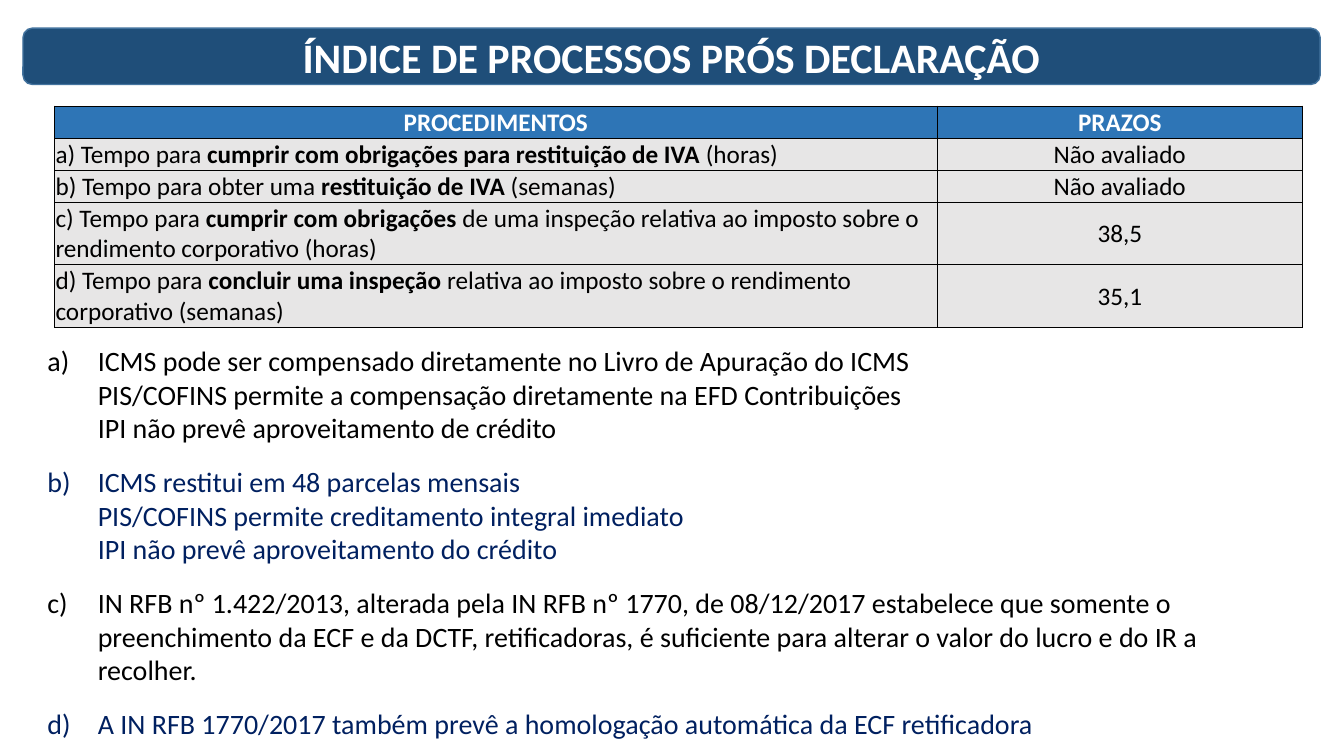
"""Build the slide on post-filing process indicators."""
from lxml.etree import SubElement
from pptx import Presentation
from pptx.dml.color import RGBColor
from pptx.enum.shapes import MSO_SHAPE
from pptx.enum.text import MSO_ANCHOR, MSO_AUTO_SIZE, PP_ALIGN
from pptx.oxml.ns import qn
from pptx.util import Cm, Pt

FONT = "Calibri"
BLACK, WHITE, NAVY = "000000", "FFFFFF", "002060"
BANNER, BANNER_EDGE, HEADER, ROW = "1F4E79", "43739E", "2E75B6", "E7E6E6"

TITLE = "ÍNDICE DE PROCESSOS PRÓS DECLARAÇÃO"
HEADINGS = ("PROCEDIMENTOS", "PRAZOS")
PROCEDURES = [
    (("a) Tempo para ", "cumprir com obrigações para restituição de IVA ", "(horas)"),
     "Não avaliado"),
    (("b) Tempo para obter uma ", "restituição de IVA ", "(semanas)"),
     "Não avaliado"),
    (("c) Tempo para ", "cumprir com obrigações",
      " de uma inspeção relativa ao imposto sobre o rendimento corporativo (horas)"),
     "38,5"),
    (("d) Tempo para ", "concluir uma inspeção",
      " relativa ao imposto sobre o rendimento corporativo (semanas)"),
     "35,1"),
]
NOTES = [
    ("ICMS pode ser compensado diretamente no Livro de Apuração do ICMS",
     "PIS/COFINS permite a compensação diretamente na EFD Contribuições",
     "IPI não prevê aproveitamento de crédito"),
    ("ICMS restitui em 48 parcelas mensais",
     "PIS/COFINS permite creditamento integral imediato",
     "IPI não prevê aproveitamento do crédito"),
    ("IN RFB nº 1.422/2013, alterada pela IN RFB nº 1770, de 08/12/2017 estabelece "
     "que somente o preenchimento da ECF e da DCTF, retificadoras, é suficiente para "
     "alterar o valor do lucro e do IR a recolher.",),
    ("A IN RFB 1770/2017 também prevê a homologação automática da ECF retificadora",),
]

BANNER_BOX = (Cm(0.58), Cm(0.71), Cm(32.69), Cm(1.42))
TABLE_BOX = (Cm(1.37), Cm(2.67), Cm(31.45), Cm(5.44))
NOTES_BOX = (Cm(0.94), Cm(8.53), Cm(31.88), Cm(10.34))
COLUMN_WIDTHS = (Cm(22.25), Cm(9.2))
ROW_HEIGHTS = (Cm(0.78), Cm(0.78), Cm(0.78), Cm(1.55), Cm(1.55))
INDENT = Cm(1.27)


def color(value):
    return RGBColor.from_string(value)


def place(shape, box):
    shape.left, shape.top, shape.width, shape.height = box


def add_run(paragraph, text, size, ink, bold=False):
    run = paragraph.add_run()
    run.text = text
    run.font.name = FONT
    run.font.size = Pt(size)
    run.font.bold = bold
    run.font.color.rgb = color(ink)


def add_borders(cell):
    properties = cell._tc.get_or_add_tcPr()
    for side in ("a:lnL", "a:lnR", "a:lnT", "a:lnB"):
        line = SubElement(properties, qn(side), w=str(Pt(0.5)))
        fill = SubElement(line, qn("a:solidFill"))
        SubElement(fill, qn("a:srgbClr"), val=BLACK)


def fill_cell(cell, parts, background, ink, alignment):
    add_borders(cell)
    cell.fill.solid()
    cell.fill.fore_color.rgb = color(background)
    cell.margin_left = cell.margin_right = cell.margin_top = Cm(0.03)
    cell.margin_bottom = 0
    cell.vertical_anchor = MSO_ANCHOR.MIDDLE
    paragraph = cell.text_frame.paragraphs[0]
    paragraph.alignment = alignment
    for text, bold in parts:
        add_run(paragraph, text, 18, ink, bold)


def add_title(slide):
    banner = slide.shapes.add_shape(MSO_SHAPE.ROUNDED_RECTANGLE, *BANNER_BOX)
    banner.shadow.inherit = False
    banner.fill.solid()
    banner.fill.fore_color.rgb = color(BANNER)
    banner.line.color.rgb = color(BANNER_EDGE)
    banner.line.width = Pt(1)
    title = slide.shapes.title
    title._element.addprevious(banner._element)
    place(title, BANNER_BOX)
    frame = title.text_frame
    frame.auto_size = MSO_AUTO_SIZE.NONE
    frame.vertical_anchor = MSO_ANCHOR.MIDDLE
    frame.paragraphs[0].alignment = PP_ALIGN.CENTER
    add_run(frame.paragraphs[0], TITLE, 30, WHITE, True)


def add_procedures(slide):
    table = slide.shapes.add_table(len(ROW_HEIGHTS), len(COLUMN_WIDTHS), *TABLE_BOX).table
    for column, width in zip(table.columns, COLUMN_WIDTHS):
        column.width = width
    for row, height in zip(table.rows, ROW_HEIGHTS):
        row.height = height
    for index, heading in enumerate(HEADINGS):
        fill_cell(table.cell(0, index), [(heading, True)], HEADER, WHITE, PP_ALIGN.CENTER)
    for index, (phrases, deadline) in enumerate(PROCEDURES, 1):
        parts = zip(phrases, (False, True, False))
        fill_cell(table.cell(index, 0), parts, ROW, BLACK, PP_ALIGN.LEFT)
        fill_cell(table.cell(index, 1), [(deadline, False)], ROW, BLACK, PP_ALIGN.CENTER)


def format_note(paragraph, number, is_first_line):
    paragraph.line_spacing = 1.0
    paragraph.space_before = Pt(14.4 if is_first_line and number > 1 else 0)
    properties = paragraph._p.get_or_add_pPr()
    properties.set("marL", str(INDENT))
    properties.set("indent", str(-INDENT if is_first_line else 0))
    if is_first_line:
        SubElement(properties, qn("a:buFont"), typeface=FONT)
        SubElement(properties, qn("a:buAutoNum"), type="alphaLcParenR", startAt=str(number))
    else:
        SubElement(properties, qn("a:buNone"))


def add_notes(slide):
    body = slide.placeholders[1]
    place(body, NOTES_BOX)
    frame = body.text_frame
    frame.auto_size = MSO_AUTO_SIZE.NONE
    frame.vertical_anchor = MSO_ANCHOR.TOP
    paragraph = frame.paragraphs[0]
    for number, lines in enumerate(NOTES, 1):
        for position, text in enumerate(lines):
            if number + position > 1:
                paragraph = frame.add_paragraph()
            format_note(paragraph, number, position == 0)
            add_run(paragraph, text, 20, BLACK if number % 2 else NAVY)


def main():
    presentation = Presentation()
    presentation.slide_width, presentation.slide_height = Cm(33.87), Cm(19.05)
    slide = presentation.slides.add_slide(presentation.slide_layouts[1])
    add_title(slide)
    add_procedures(slide)
    add_notes(slide)
    presentation.save("out.pptx")


if __name__ == "__main__":
    main()
